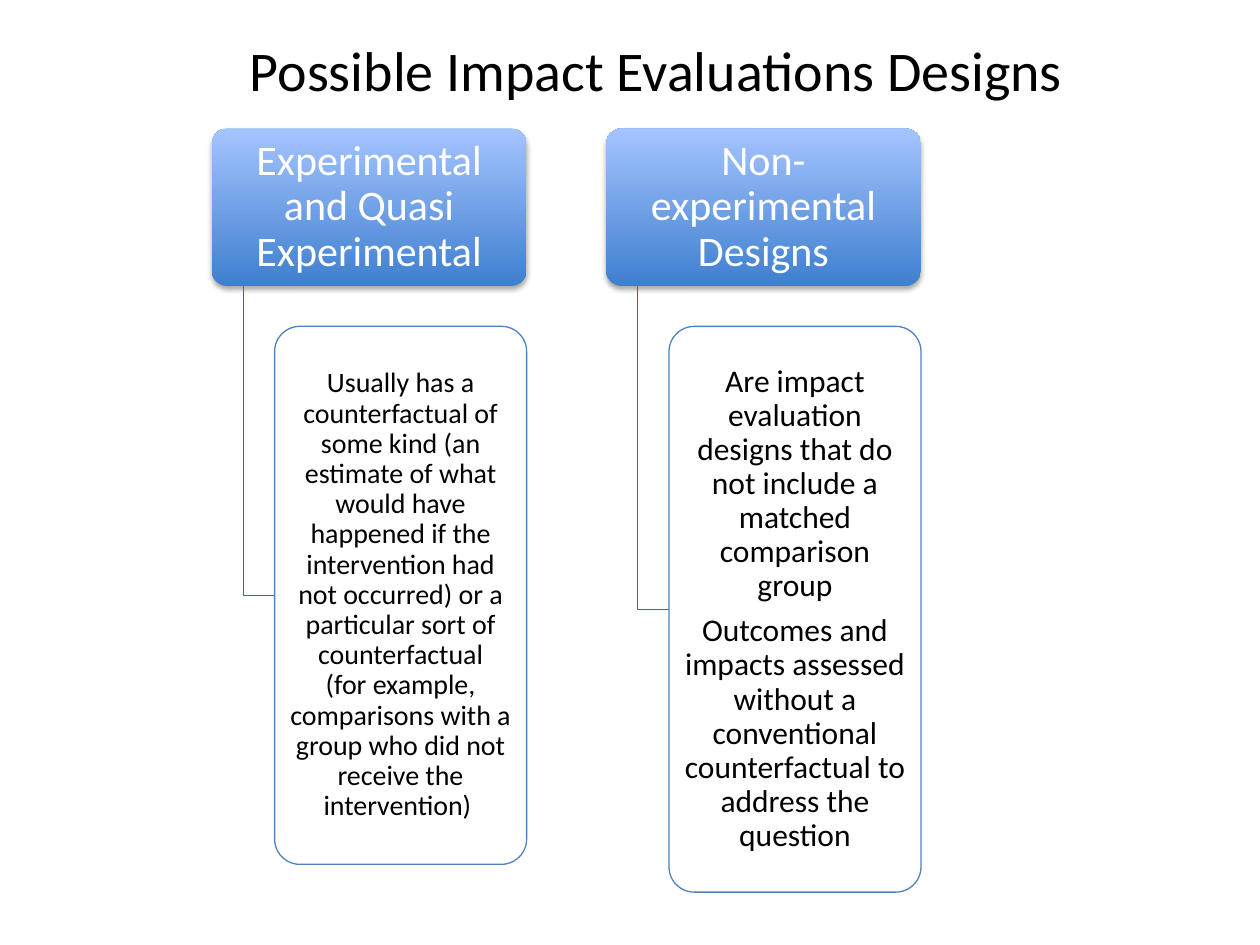
from lxml.etree import SubElement
from pptx import Presentation
from pptx.dml.color import RGBColor
from pptx.enum.shapes import MSO_SHAPE
from pptx.enum.text import MSO_ANCHOR, PP_ALIGN
from pptx.oxml.ns import qn
from pptx.util import Inches, Pt

TITLE = "Possible Impact Evaluations Designs"
DESIGNS = [
    {
        "heading": "Experimental and Quasi Experimental",
        "details": [
            "Usually has a counterfactual of some kind (an estimate of what would have "
            "happened if the intervention had not occurred) or a particular sort of "
            "counterfactual\n(for example, comparisons with a group who did not receive "
            "the intervention) ",
        ],
        "size": 16, "height": 4.27, "insets": (0.03, 0.02),
    },
    {
        "heading": "Non-experimental Designs",
        "details": [
            "Are impact evaluation designs that do not include a matched comparison group",
            "Outcomes and impacts assessed without a conventional counterfactual to "
            "address the question",
        ],
        "size": 18, "height": 4.49, "insets": (0.04, 0.03),
    },
]
FONT = "Calibri"
LEFT, TOP, PITCH = 1.68, 1.02, 3.13
HEAD_WIDTH, HEAD_HEIGHT = 2.5, 1.25
DETAIL_TOP, DETAIL_WIDTH = 2.59, 2.0
INDENT = 0.25


def rgb(color):
    return RGBColor.from_string(color)


def style_text(paragraph, size, color):
    paragraph.alignment = PP_ALIGN.CENTER
    paragraph.font.name = FONT
    paragraph.font.size = Pt(size)
    paragraph.font.color.rgb = rgb(color)


def add_box(slide, left, top, width, height, texts, size, color, insets):
    box = slide.shapes.add_shape(MSO_SHAPE.ROUNDED_RECTANGLE, Inches(left), Inches(top),
                                 Inches(width), Inches(height))
    box.adjustments[0] = 0.1
    box.shadow.inherit = False
    frame = box.text_frame
    frame.word_wrap = True
    frame.vertical_anchor = MSO_ANCHOR.MIDDLE
    frame.margin_left = frame.margin_right = Inches(insets[0])
    frame.margin_top = frame.margin_bottom = Inches(insets[1])
    for index, text in enumerate(texts):
        para = frame.add_paragraph() if index else frame.paragraphs[0]
        para.text = text
        para.line_spacing = 0.9
        para.space_after = Pt(round(size * 0.35, 1))
        style_text(para, size, color)
    return box


def add_heading(slide, left, text):
    box = add_box(slide, left, TOP, HEAD_WIDTH, HEAD_HEIGHT, [text], 24, "FFFFFF",
                  (0.05, 0.03))
    box.fill.gradient()
    box.fill.gradient_angle = 90
    for stop, color in zip(box.fill.gradient_stops, ("3F7FCE", "A4C4FF")):
        stop.color.rgb = rgb(color)
    box.line.fill.background()
    effects = box._element.spPr.find(qn("a:effectLst"))
    shadow = SubElement(effects, qn("a:outerShdw"), blurRad=str(Pt(3.1)),
                        dist=str(Pt(1.8)), dir="5400000", rotWithShape="0")
    black = SubElement(shadow, qn("a:srgbClr"), val="000000")
    SubElement(black, qn("a:alpha"), val="35000")


def add_elbow(slide, left, top, bottom):
    builder = slide.shapes.build_freeform(Inches(left), Inches(top))
    builder.add_line_segments([(Inches(left), Inches(bottom)),
                               (Inches(left + INDENT), Inches(bottom))], close=False)
    elbow = builder.convert_to_shape()
    elbow.shadow.inherit = False
    elbow.fill.background()
    elbow.line.color.rgb = rgb("3F6797")
    elbow.line.width = Pt(0.75)


def add_details(slide, left, design):
    box = add_box(slide, left, DETAIL_TOP, DETAIL_WIDTH, design["height"],
                  design["details"], design["size"], "000000", design["insets"])
    box.fill.solid()
    box.fill.fore_color.rgb = rgb("FFFFFF")
    white = box._element.spPr.find(qn("a:solidFill")).find(qn("a:srgbClr"))
    SubElement(white, qn("a:alpha"), val="90000")
    box.line.color.rgb = rgb("4F81BD")
    box.line.width = Pt(0.75)


def main():
    deck = Presentation()
    deck.slide_width, deck.slide_height = Inches(10), Inches(7.5)
    page = deck.slides.add_slide(deck.slide_layouts[5])

    title = page.shapes.title
    title.left, title.top = Inches(0.68), Inches(0.22)
    title.width, title.height = Inches(9.06), Inches(0.65)
    title.text_frame.text = TITLE
    title.text_frame.vertical_anchor = MSO_ANCHOR.MIDDLE
    style_text(title.text_frame.paragraphs[0], 32, "000000")

    for column, design in enumerate(DESIGNS):
        left = LEFT + column * PITCH
        add_heading(page, left, design["heading"])
        add_elbow(page, left + INDENT, TOP + HEAD_HEIGHT, DETAIL_TOP + design["height"] / 2)
        add_details(page, left + 2 * INDENT, design)

    deck.save("out.pptx")


if __name__ == "__main__":
    main()
